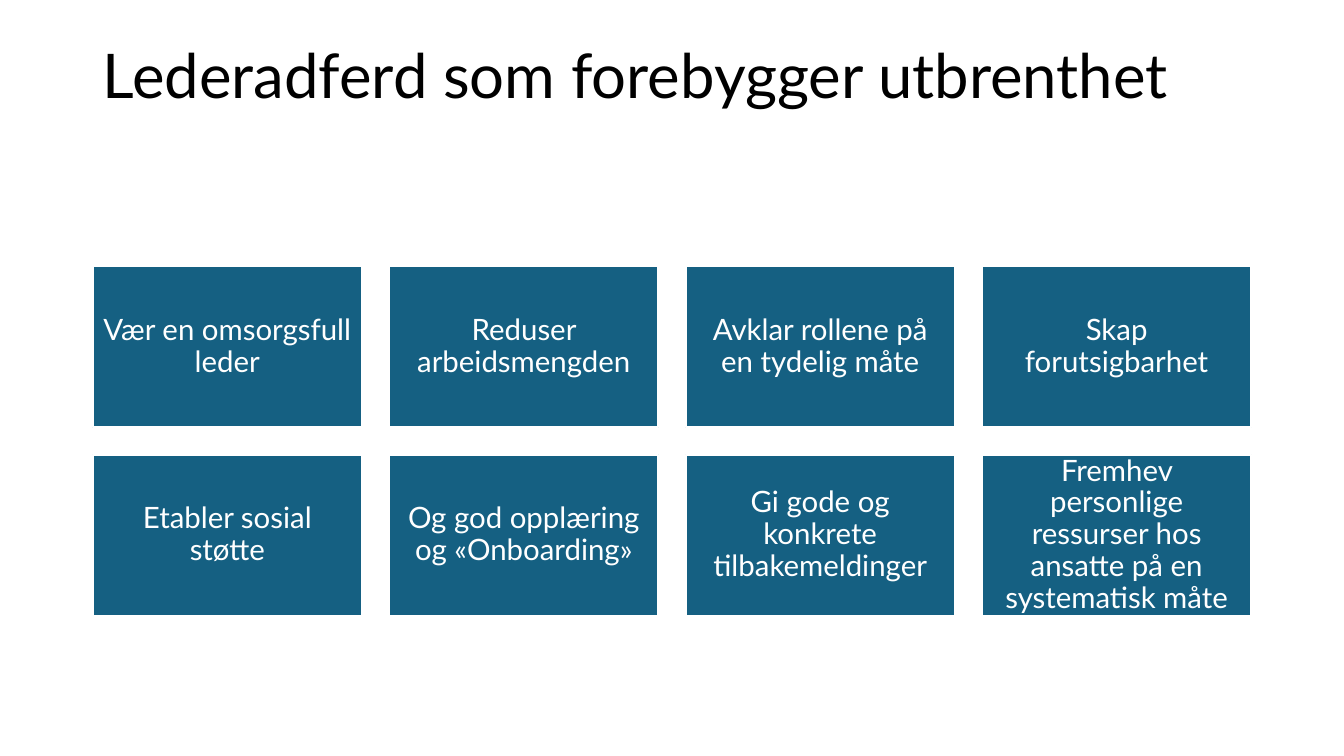
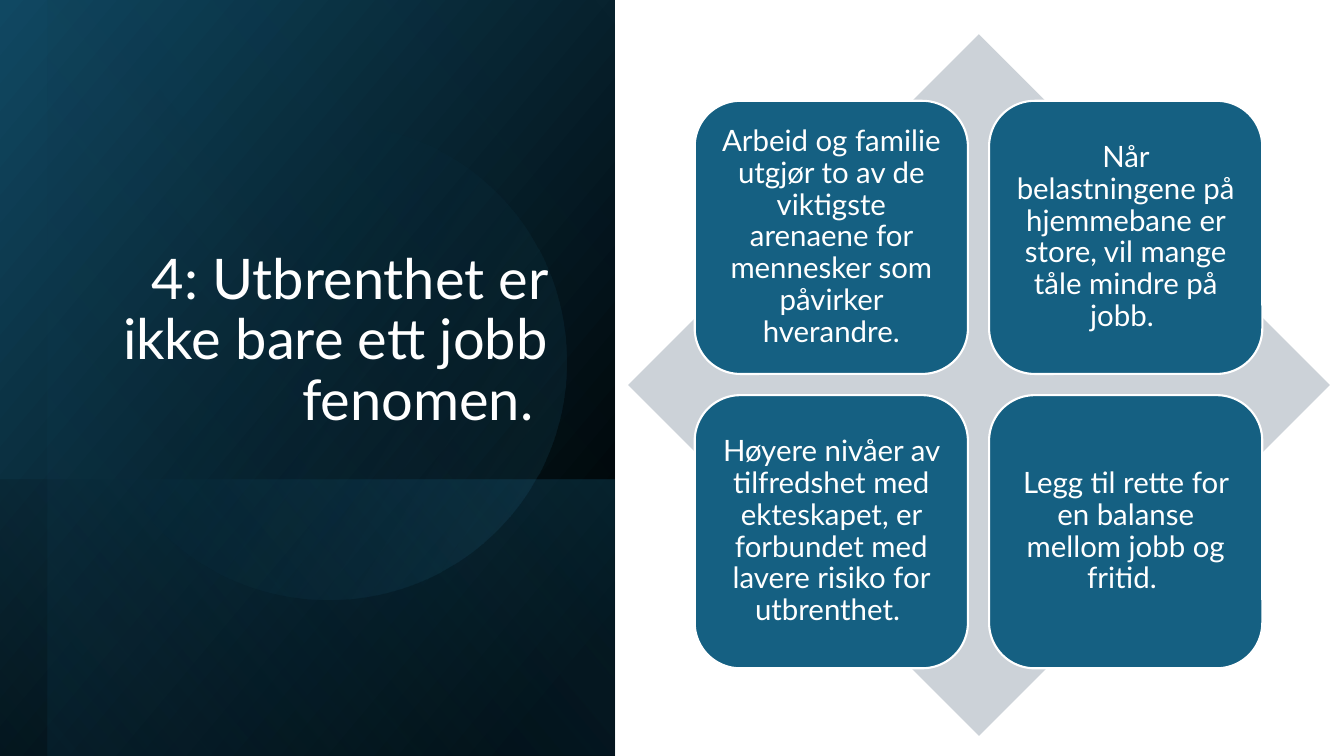
import pptx
import pptx.dml.color
import pptx.enum.shapes
import pptx.enum.text
import pptx.oxml
import pptx.oxml.ns
import pptx.util

Inches = pptx.util.Inches
Pt = pptx.util.Pt
SHAPE = pptx.enum.shapes.MSO_SHAPE
ALIGN = pptx.enum.text.PP_ALIGN
ANCHOR = pptx.enum.text.MSO_ANCHOR

FONT = "Lato"
WHITE = "FFFFFF"
BLACK = "000000"
TEAL = "156082"
NAVY = "104862"
SKY = "46B1E1"
GREY = "CCD2D8"

LEADER_ACTIONS = [
    "Vær en omsorgsfull leder",
    "Reduser arbeidsmengden",
    "Avklar rollene på en tydelig måte",
    "Skap forutsigbarhet",
    "Etabler sosial støtte",
    "Og god opplæring og «Onboarding»",
    "Gi gode og konkrete tilbakemeldinger",
    "Fremhev personlige ressurser hos ansatte på en systematisk måte",
]
WORK_AND_HOME = [
    "Arbeid og familie utgjør to av de viktigste arenaene for mennesker som påvirker hverandre.",
    "Når belastningene på hjemmebane er store, vil mange tåle mindre på jobb. ",
    "Høyere nivåer av tilfredshet med ekteskapet, er forbundet med lavere risiko for utbrenthet. ",
    "Legg til rette for en balanse mellom jobb og fritid. ",
]


def rgb(color):
    return pptx.dml.color.RGBColor.from_string(color)


def write(sp, text, size, color, align, anchor):
    tf = sp.text_frame
    tf.word_wrap = True
    tf.vertical_anchor = anchor
    p = tf.paragraphs[0]
    p.text = text
    p.alignment = align
    p.line_spacing = 0.9
    p.font.name = FONT
    p.font.size = Pt(size)
    p.font.color.rgb = rgb(color)
    return tf


def add_title(slide, box, text, size, color, align, anchor):
    sp = slide.shapes.add_textbox(*map(Inches, box))
    write(sp, text, size, color, align, anchor)


def add_plain(slide, kind, box):
    """Add a preset shape without shadow or outline."""
    sp = slide.shapes.add_shape(kind, *map(Inches, box))
    sp.shadow.inherit = False
    sp.line.fill.background()
    return sp


def add_solid(slide, kind, box, color):
    sp = add_plain(slide, kind, box)
    sp.fill.solid()
    sp.fill.fore_color.rgb = rgb(color)
    return sp


def add_gradient(slide, kind, box, rotation, angle, stops, flip=False):
    """Fill with two (percent, colour, opacity) stops, angle clockwise."""
    sp = add_plain(slide, kind, box)
    sp.rotation = rotation
    sp_pr = sp._element.spPr
    if flip:
        sp_pr.xfrm.set("flipH", "1")
    sp.fill.gradient()
    sp.fill.gradient_angle = 360 - angle
    for stop, (percent, color, _) in zip(sp.fill.gradient_stops, stops):
        stop.position = percent / 100
        stop.color.rgb = rgb(color)
    colors = sp_pr.iter(pptx.oxml.ns.qn("a:srgbClr"))
    for element, (_, _, opacity) in zip(colors, stops):
        alpha = pptx.oxml.parse_xml(
            f'<a:alpha {pptx.oxml.ns.nsdecls("a")} val="{opacity * 1000}"/>')
        element.append(alpha)


def add_tiles(slide, kind, texts, columns, origin, size, gap):
    """Lay out equal text tiles row by row."""
    left, top = origin
    width, height = size
    for i, text in enumerate(texts):
        row, column = divmod(i, columns)
        box = (left + column * (width + gap), top + row * (height + gap), width, height)
        sp = add_solid(slide, kind, box, TEAL)
        sp.line.color.rgb = rgb(WHITE)
        sp.line.width = Pt(1.5)
        tf = write(sp, text, 21, WHITE, ALIGN.CENTER, ANCHOR.MIDDLE)
        tf.margin_left = tf.margin_right = Inches(0.09)
        tf.margin_top = tf.margin_bottom = Inches(0.09)


def add_dark_panel(slide):
    add_gradient(slide, SHAPE.RECTANGLE, (-0.7, 0.7, 7.5, 6.1), 90, 50,
                 [(8, BLACK, 100), (100, NAVY, 100)], flip=True)
    add_gradient(slide, SHAPE.RECTANGLE, (1.67, 3.08, 2.74, 6.1), 90, 130,
                 [(2, TEAL, 29), (100, BLACK, 30)], flip=True)
    add_gradient(slide, SHAPE.RECTANGLE, (-0.46, 0.93, 7.5, 5.63), 90, 130,
                 [(0, BLACK, 0), (99, TEAL, 11)], flip=True)
    add_gradient(slide, SHAPE.OVAL, (0.9, 1.23, 4.72, 4.72), 101.6, 290,
                 [(39, TEAL, 0), (100, SKY, 15)])


def build_leader_slide(slide):
    add_title(slide, (0.92, 0.4, 11.5, 1.45), "Lederadferd som forebygger utbrenthet",
              44, BLACK, ALIGN.LEFT, ANCHOR.TOP)
    add_tiles(slide, SHAPE.RECTANGLE, LEADER_ACTIONS, 4, (0.92, 2.64), (2.67, 1.6), 0.27)


def build_balance_slide(slide):
    add_dark_panel(slide)
    add_title(slide, (0.9, 0.64, 4.63, 3.7), "4: Utbrenthet er ikke bare ett jobb fenomen. ",
              40, WHITE, ALIGN.RIGHT, ANCHOR.BOTTOM)
    add_solid(slide, SHAPE.DIAMOND, (6.23, 0.34, 6.96, 6.96), GREY)
    add_tiles(slide, SHAPE.ROUNDED_RECTANGLE, WORK_AND_HOME, 2, (6.89, 1), (2.71, 2.71), 0.21)


def main():
    prs = pptx.Presentation()
    prs.slide_width = Inches(13.33)
    prs.slide_height = Inches(7.5)
    for build in (build_leader_slide, build_balance_slide):
        build(prs.slides.add_slide(prs.slide_layouts[6]))
    prs.save("out.pptx")


if __name__ == "__main__":
    main()
